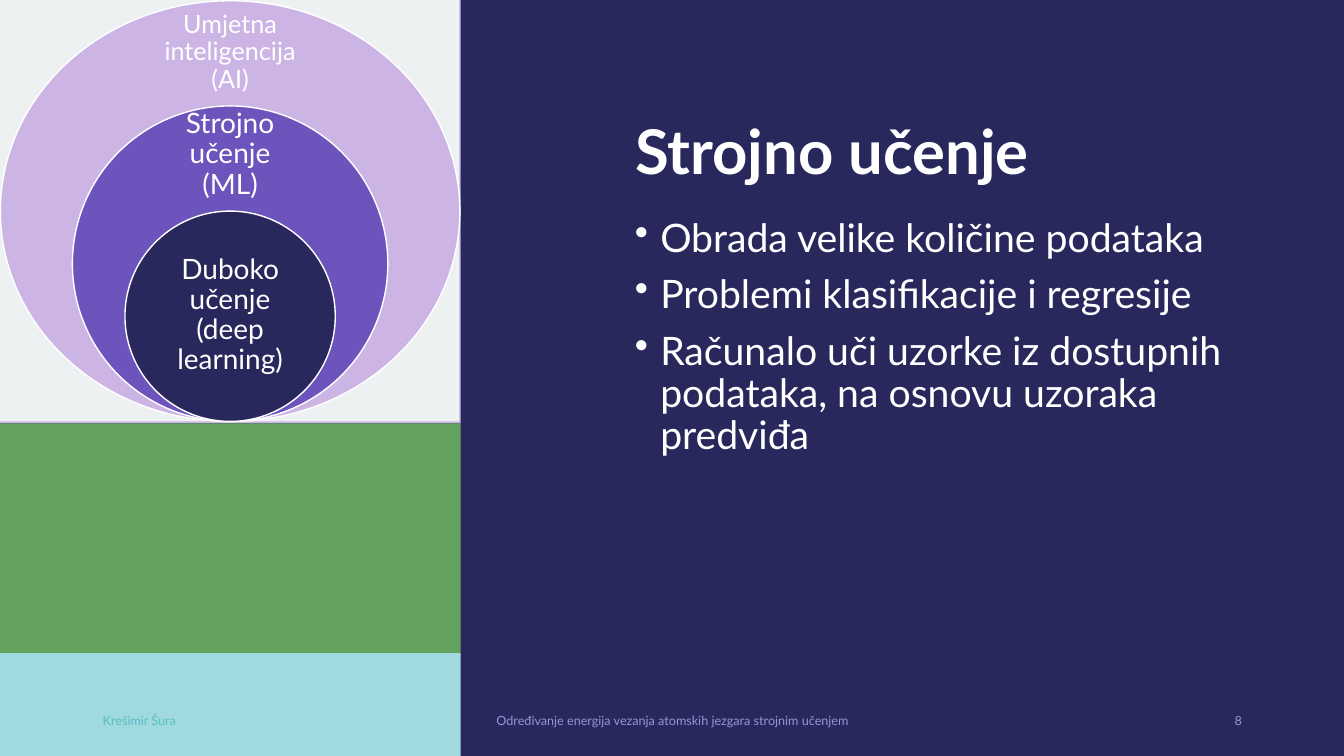
from itertools import pairwise

from lxml import etree
from pptx import Presentation
from pptx.dml.color import RGBColor
from pptx.enum import shapes, text
from pptx.oxml import ns
from pptx.util import Cm, Pt

FONT = "Lato"
COLORS = {
    "navy": "29285D", "violet": "6D53BC", "lilac": "CCB5E5", "green": "62A25D",
    "aqua": "A0DADE", "mist": "EDF1F2", "white": "FFFFFF",
    "teal": "59BEC5", "lavender": "9796D2",
}
LEFT, CENTER, RIGHT = text.PP_ALIGN.LEFT, text.PP_ALIGN.CENTER, text.PP_ALIGN.RIGHT
TOP, MIDDLE, BOTTOM = (text.MSO_ANCHOR.TOP, text.MSO_ANCHOR.MIDDLE,
                       text.MSO_ANCHOR.BOTTOM)

# All lengths are in centimetres, boxes are left, top, width, height.
WIDTH, HEIGHT = 33.87, 19.05
TITLE, TITLE_BOX = "Strojno učenje", (15.75, 1.17, 15.8, 3.68)
BULLETS_BOX = (15.75, 5.38, 17.25, 6.22)
BULLETS = [
    "Obrada velike količine podataka",
    "Problemi klasifikacije i regresije",
    "Računalo uči uzorke iz dostupnih podataka, na osnovu uzoraka predviđa",
]
BAND_WIDTH = 11.61
BAND_COLORS = ["lilac", "green", "aqua"]
BAND_EDGES = [0, 10.67, 16.46, HEIGHT]
PANEL = (0, 0, 11.58, 10.62)

# label, colour, share of the outer height, label top, width, height, inset, size
FIELDS = [
    ("Umjetna inteligencija (AI)", "lilac", 1, 0.53, 4.04, 1.6, 0.36, 18),
    ("Strojno učenje (ML)", "violet", 0.75, 3.15, 3.71, 1.5, 0.41, 20),
    ("Duboko učenje (deep learning)", "navy", 0.5, 6.63, 3.73, 2.64, 0.41, 20),
]
FIELDS_CENTER, FIELDS_BOTTOM, OUTER_HEIGHT = 5.8, 10.62, 10.6

FOOTER_TOP, FOOTER_HEIGHT = 17.65, 1.02
FOOTERS = [
    ("Krešimir Šura", 2.34, 7.62, LEFT, "teal"),
    ("Određivanje energija vezanja atomskih jezgara strojnim učenjem",
     11.23, 11.43, CENTER, "lavender"),
    ("8", 23.93, 7.62, RIGHT, "lavender"),
]


def rgb(name):
    return RGBColor.from_string(COLORS[name])


def cm_box(box):
    return [Cm(length) for length in box]


def add_filled(slide, kind, box, color, outline=None):
    figure = slide.shapes.add_shape(kind, *cm_box(box))
    figure.shadow.inherit = False
    figure.fill.solid()
    figure.fill.fore_color.rgb = rgb(color)
    if outline:
        figure.line.color.rgb = rgb(outline)
        figure.line.width = Pt(1)
    else:
        figure.line.fill.background()


def write(frame, lines, size, color="white", align=LEFT, anchor=MIDDLE,
          spacing=None, bold=False):
    frame.word_wrap = True
    frame.auto_size = text.MSO_AUTO_SIZE.NONE
    frame.vertical_anchor = anchor
    frame.text = "\n".join(lines)
    for paragraph in frame.paragraphs:
        paragraph.alignment = align
        paragraph.line_spacing = spacing
        font = paragraph.runs[0].font
        font.name, font.size, font.bold = FONT, Pt(size), bold
        font.color.rgb = rgb(color)


def add_text(slide, box, lines, size, **style):
    frame = slide.shapes.add_textbox(*cm_box(box)).text_frame
    write(frame, lines, size, **style)
    return frame


def add_bullet(paragraph):
    paragraph.space_before = Pt(10)
    properties = paragraph._p.get_or_add_pPr()
    properties.set("marL", str(Cm(0.64)))
    properties.set("indent", str(-Cm(0.64)))
    etree.SubElement(properties, ns.qn("a:buChar"), char="•")


def add_fields(slide):
    """Nested ellipses that share their lowest point, each with its label."""
    for label, color, share, top, label_width, label_height, inset, size in FIELDS:
        height = OUTER_HEIGHT * share
        width = PANEL[2] if share == 1 else height
        add_filled(slide, shapes.MSO_SHAPE.OVAL,
                   (FIELDS_CENTER - width / 2, FIELDS_BOTTOM - height, width, height),
                   color, outline="white")
        label_box = (FIELDS_CENTER - label_width / 2, top, label_width, label_height)
        frame = add_text(slide, label_box, [label], size, align=CENTER, spacing=0.9)
        frame.margin_left = frame.margin_right = Cm(inset)
        frame.margin_top = frame.margin_bottom = Cm(inset)


def main():
    deck = Presentation()
    deck.slide_width, deck.slide_height = Cm(WIDTH), Cm(HEIGHT)
    slide = deck.slides.add_slide(deck.slide_layouts[5])
    slide.background.fill.solid()
    slide.background.fill.fore_color.rgb = rgb("navy")

    for color, (top, bottom) in zip(BAND_COLORS, pairwise(BAND_EDGES)):
        add_filled(slide, shapes.MSO_SHAPE.RECTANGLE,
                   (0, top, BAND_WIDTH, bottom - top), color)
    add_filled(slide, shapes.MSO_SHAPE.RECTANGLE, PANEL, "mist")

    title = slide.shapes.title
    title.left, title.top, title.width, title.height = cm_box(TITLE_BOX)
    write(title.text_frame, [TITLE], 44, anchor=BOTTOM, spacing=0.9, bold=True)

    add_fields(slide)
    for words, left, width, align, color in FOOTERS:
        add_text(slide, (left, FOOTER_TOP, width, FOOTER_HEIGHT), [words], 9,
                 color=color, align=align)
    bullets = add_text(slide, BULLETS_BOX, BULLETS, 28, anchor=TOP, spacing=0.9)
    for paragraph in bullets.paragraphs:
        add_bullet(paragraph)

    deck.save("out.pptx")


if __name__ == "__main__":
    main()
